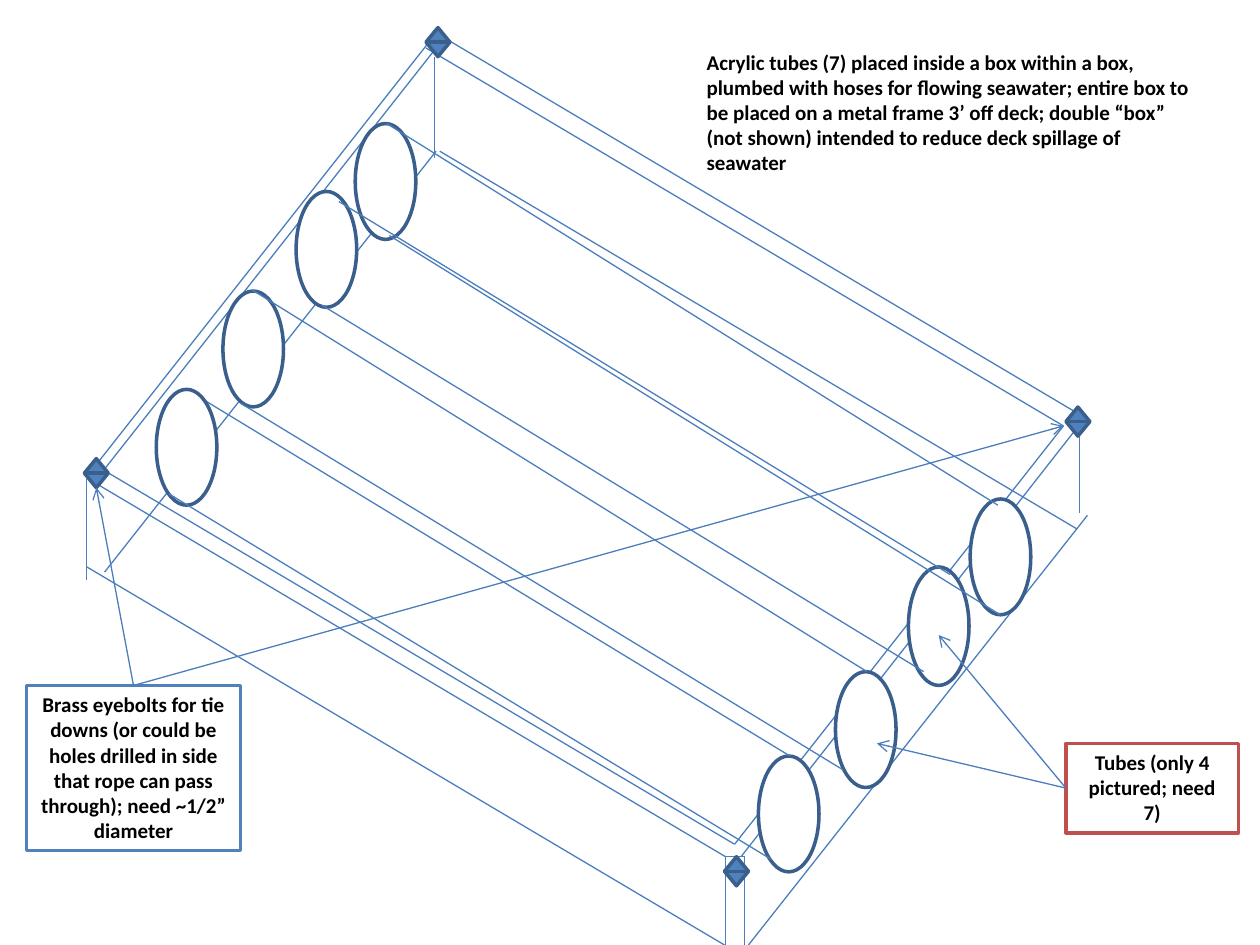
from dataclasses import dataclass

import pptx
import pptx.dml.color
import pptx.enum.shapes
import pptx.enum.text
import pptx.oxml
import pptx.oxml.ns
import pptx.util

Pt = pptx.util.Pt
SHAPE = pptx.enum.shapes.MSO_SHAPE
ALIGN = pptx.enum.text.PP_ALIGN
ANCHOR = pptx.enum.text.MSO_ANCHOR


@dataclass(frozen=True)
class Theme:
    font: str = "Calibri"
    size: float = 12
    text: str = "000000"
    paper: str = "FFFFFF"
    edge: str = "4B7EBC"
    outline: str = "3A5F8C"
    blue: str = "4F81BD"
    red: str = "C0504D"
    thin: float = 0.75
    thick: float = 2


THEME = Theme()

LONG_RUN = (364.3, 216)
LONG_STARTS = [(55.4, 266.4), (50.4, 273.6), (243.4, 27.4),
               (252.7, 20.9), (49.7, 324), (251.3, 86.4)]
NEAR_RUN = (189.4, -240.5)
NEAR_STARTS = [(60.5, 267.1), (55.4, 265), (59.8, 326.9)]
FAR_EDGES = [(419.8, 482.4, 607.7, 243.4), (423.4, 489.6, 616.3, 243.4),
             (427.7, 540, 621.4, 294.5)]
UPRIGHTS = [(617, 235.4, 57.6), (49.5, 273.6, 57.6), (248.4, 32.4, 57.6),
            (414.7, 489.6, 50.4), (425.5, 489.6, 50.4)]
CORNERS = [(55.4, 264.2, 50.4, 273.6), (414.7, 489.6, 425.5, 489.6)]

TUBE_W, TUBE_H = 34.6, 66.2
FAR_TUBES = [(433.4, 432, TUBE_H), (477.4, 383.8, TUBE_H),
             (519.1, 324, 67.7), (554.4, 285.1, TUBE_H)]
NEAR_TUBES = [(89.3, 222.5, TUBE_H), (127.4, 166.3, TUBE_H),
              (169.2, 109.4, TUBE_H), (203, 70.6, TUBE_H)]
FIRST_TUBE_TOP = (106.6, 222.5, 451.4, 432)
TUBE_SIDES = [(96.5, 282.2, 440.6, 491),
              (144, 165.6, 495.4, 383.8), (137.5, 230.4, 481.7, 439.9),
              (193.7, 115.2, 542.9, 328.3), (183.6, 174.2, 527.8, 383.8),
              (221, 70.6, 570.2, 288.7), (222.5, 134.6, 571.7, 351.4)]

BOLT_W, BOLT_H = 13.7, 16.6
BOLTS = [(414, 489.6), (609.1, 232.6), (243.4, 15.8), (48.2, 262.1)]


def rgb(value):
    return pptx.dml.color.RGBColor.from_string(value)


def add_line(slide, x1, y1, x2, y2, arrow=False):
    cxn = slide.shapes.add_connector(
        pptx.enum.shapes.MSO_CONNECTOR.STRAIGHT, Pt(x1), Pt(y1), Pt(x2), Pt(y2))
    cxn.line.color.rgb = rgb(THEME.edge)
    cxn.line.width = Pt(THEME.thin)
    if arrow:
        ln = cxn.line._get_or_add_ln()
        ln.append(pptx.oxml.parse_xml(
            f'<a:tailEnd {pptx.oxml.ns.nsdecls("a")} type="arrow"/>'))
    cxn._element.spPr.append(pptx.oxml.parse_xml(
        f'<a:effectLst {pptx.oxml.ns.nsdecls("a")}/>'))
    return cxn


def add_outlined(slide, kind, x, y, w, h, fill, line):
    sp = slide.shapes.add_shape(kind, Pt(x), Pt(y), Pt(w), Pt(h))
    sp.shadow.inherit = False
    sp.fill.solid()
    sp.fill.fore_color.rgb = rgb(fill)
    sp.line.color.rgb = rgb(line)
    sp.line.width = Pt(THEME.thick)
    return sp


def write(sp, text, align):
    tf = sp.text_frame
    tf.word_wrap = True
    tf.auto_size = pptx.enum.text.MSO_AUTO_SIZE.SHAPE_TO_FIT_TEXT
    tf.vertical_anchor = ANCHOR.TOP
    p = tf.paragraphs[0]
    p.alignment = align
    r = p.add_run()
    r.text = text
    r.font.name = THEME.font
    r.font.size = Pt(THEME.size)
    r.font.bold = True
    r.font.color.rgb = rgb(THEME.text)


def add_label(slide, text, x, y, w, h, line):
    sp = add_outlined(slide, SHAPE.RECTANGLE, x, y, w, h, THEME.paper, line)
    write(sp, text, ALIGN.CENTER)
    return sp


def add_pointer(slide, label, site, start, target):
    cxn = add_line(slide, *start, *target, arrow=True)
    cxn.begin_connect(label, site)
    return cxn


def add_box_frame(slide):
    for starts, (dx, dy) in ((LONG_STARTS, LONG_RUN), (NEAR_STARTS, NEAR_RUN)):
        for x, y in starts:
            add_line(slide, x, y, x + dx, y + dy)
    for x, y, h in UPRIGHTS:
        add_line(slide, x, y, x, y + h)
    for edge in FAR_EDGES + CORNERS:
        add_line(slide, *edge)


def add_tube_ends(slide, ends):
    for x, y, h in ends:
        add_outlined(slide, SHAPE.OVAL, x, y, TUBE_W, h, THEME.paper, THEME.outline)


def add_tubes(slide):
    """The first tube's top side runs behind its near end; other sides lie in front."""
    add_tube_ends(slide, FAR_TUBES)
    add_line(slide, *FIRST_TUBE_TOP)
    add_tube_ends(slide, NEAR_TUBES)
    for side in TUBE_SIDES:
        add_line(slide, *side)


def add_bolts(slide):
    return [add_outlined(slide, SHAPE.FLOWCHART_SORT, x, y, BOLT_W, BOLT_H,
                         THEME.blue, THEME.outline) for x, y in BOLTS]


def main():
    prs = pptx.Presentation()
    prs.slide_width, prs.slide_height = Pt(720), Pt(540)
    slide = prs.slides.add_slide(prs.slide_layouts[6])

    add_box_frame(slide)
    add_tubes(slide)
    note = slide.shapes.add_textbox(Pt(396.7), Pt(24.5), Pt(298.1), Pt(79.9))
    write(note, "Acrylic tubes (7) placed inside a box within a box, plumbed with "
          "hoses for flowing seawater; entire box to be placed on a metal frame 3’ "
          "off deck; double “box” (not shown) intended to reduce deck spillage of "
          "seawater", ALIGN.LEFT)
    bolts = add_bolts(slide)

    bolt_label = add_label(
        slide, "Brass eyebolts for tie downs (or could be holes drilled in side that "
        "rope can pass through); need ~1/2” diameter",
        15.1, 391.7, 122.4, 94.3, THEME.blue)
    bolt_top = (76.3, 391.7)
    add_pointer(slide, bolt_label, 0, bolt_top, (55.4, 279.4)).end_connect(bolts[3], 2)
    add_pointer(slide, bolt_label, 0, bolt_top, (607.7, 243.4))

    tube_label = add_label(slide, "Tubes (only 4 pictured; need 7)",
                           609.1, 424.8, 98.6, 51.1, THEME.red)
    for target in ((501.1, 424.8), (536.4, 362.9)):
        add_pointer(slide, tube_label, 1, (609.1, 450.4), target)

    prs.save("out.pptx")


if __name__ == "__main__":
    main()
